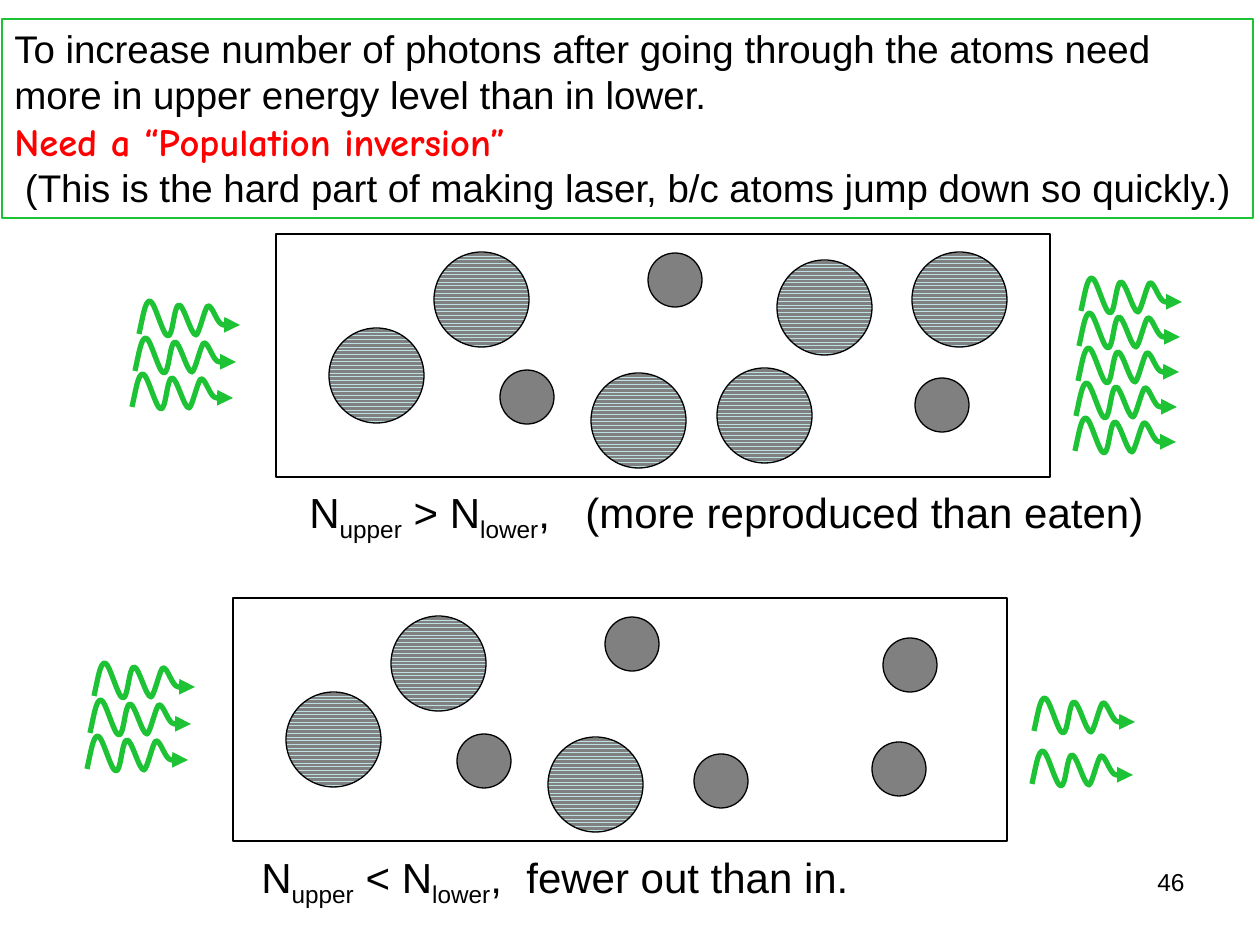
from lxml.etree import SubElement
from pptx import Presentation
from pptx.dml.color import RGBColor
from pptx.enum.dml import MSO_PATTERN
from pptx.enum.shapes import MSO_SHAPE
from pptx.enum.text import MSO_ANCHOR, PP_ALIGN
from pptx.oxml.ns import qn
from pptx.util import Pt

PX = 914400 // 126
COLORS = {"ink": "000000", "photon": "1EC235", "alert": "FF0000",
          "atom": "808080", "stripe": "BBE0E3"}
EXCITED_SIZE, GROUND_SIZE = 95, 54
WAVE_START = (0, 33)
WAVE_CONTROLS = [
    (4, 16), (6, 0), (11, 0), (16, 1), (24, 35), (29, 35), (34, 36),
    (35, 4), (40, 4), (45, 4), (52, 34), (57, 34), (60, 34), (66, 6),
    (69, 5), (73, 4), (77, 19), (82, 23), (87, 25), (98, 24), (101, 24),
]


def color(name):
    """Return the named colour."""
    return RGBColor.from_string(COLORS[name])


def outline(part, name, width=0.75):
    """Give a part a solid outline."""
    part.line.color.rgb = color(name)
    part.line.width = Pt(width)


def style(run, size, name="ink", family="Arial", bold=False):
    """Format one run of text."""
    run.font.size = Pt(size)
    run.font.name = family
    run.font.bold = bold
    run.font.color.rgb = color(name)


def add_text_area(slide, box):
    """Add a wrapping text box at a pixel box."""
    area = slide.shapes.add_textbox(*(side * PX for side in box))
    area.text_frame.word_wrap = True
    return area


def add_message(slide, box):
    """Add the framed explanation at the top."""
    message = add_text_area(slide, box)
    outline(message, "photon")
    frame = message.text_frame
    frame.word_wrap = False
    frame.text = "\n".join([
        "To increase number of photons after going through the atoms need",
        "more in upper energy level than in lower.",
        "Need a “Population inversion”",
        " (This is the hard part of making laser, b/c atoms jump down so quickly.)",
    ])
    for line in frame.paragraphs:
        style(line.runs[0], 22)
    style(frame.paragraphs[2].runs[0], 22, "alert", "Comic Neue", True)


def add_photon(slide, left, top):
    """Add one wavy photon arrow with smooth curves."""
    builder = slide.shapes.build_freeform(*WAVE_START, scale=PX)
    builder.add_line_segments(WAVE_CONTROLS, close=False)
    photon = builder.convert_to_shape(left * PX, top * PX)
    photon.shadow.inherit = False
    photon.fill.background()
    outline(photon, "photon", 3)
    SubElement(photon.line._get_or_add_ln(), qn("a:tailEnd"), type="triangle")
    path = next(photon._element.iter(qn("a:path")))
    segments = path.findall(qn("a:lnTo"))
    for first in range(0, len(segments), 3):
        curve = SubElement(path, qn("a:cubicBezTo"))
        for segment in segments[first:first + 3]:
            curve.append(segment[0])
            path.remove(segment)


def add_photons(slide, left, top, count, step_x, step_y):
    """Add an evenly stepped stack of photons."""
    for index in range(count):
        add_photon(slide, round(left + index * step_x), round(top + index * step_y))


def add_atom(slide, left, top, excited):
    """Add a large striped excited atom or a small ground-state atom."""
    size = EXCITED_SIZE if excited else GROUND_SIZE
    atom = slide.shapes.add_shape(
        MSO_SHAPE.OVAL, left * PX, top * PX, size * PX, size * PX)
    atom.shadow.inherit = False
    if excited:
        atom.fill.patterned()
        atom.fill.pattern = MSO_PATTERN.ZIG_ZAG
        atom.fill.fore_color.rgb = color("stripe")
        atom.fill.back_color.rgb = color("atom")
    else:
        atom.fill.solid()
        atom.fill.fore_color.rgb = color("atom")
    outline(atom, "ink")


def add_caption(slide, box, relation, remark, tab):
    """Add the population inequality and its tabbed remark."""
    caption = add_text_area(slide, box)
    line = caption.text_frame.paragraphs[0]
    tabs = SubElement(line._p.get_or_add_pPr(), qn("a:tabLst"))
    SubElement(tabs, qn("a:tab"), pos=str(tab * PX), algn="l")
    for text in ("N", "upper", f" {relation} N", "lower", f",\t{remark}"):
        run = line.add_run()
        run.text = text
        style(run, 24)
        if text in ("upper", "lower"):
            run._r.get_or_add_rPr().set("baseline", "-25000")


def add_panel(slide, box, excited, ground, streams, caption):
    """Add one gas cell with its atoms, photon streams and caption."""
    left, top, width, height = box
    cell = slide.shapes.add_shape(
        MSO_SHAPE.RECTANGLE, *(side * PX for side in box))
    cell.shadow.inherit = False
    cell.fill.background()
    outline(cell, "ink")
    for atoms, is_excited in ((ground, False), (excited, True)):
        for x, y in atoms:
            add_atom(slide, left + x, top + y, is_excited)
    for x, y, *steps in streams:
        add_photons(slide, left + x, top + y, *steps)
    (x, y, *size), *wording = caption
    add_caption(slide, (left + x, top + y, *size), *wording)


def add_page_number(slide, box):
    """Add the page number."""
    number = add_text_area(slide, box)
    number.text_frame.vertical_anchor = MSO_ANCHOR.TOP
    line = number.text_frame.paragraphs[0]
    line.text = "46"
    line.alignment = PP_ALIGN.RIGHT
    style(line.runs[0], 14)


def main():
    """Build and save the slide."""
    deck = Presentation()
    deck.slide_width, deck.slide_height = 1260 * PX, 945 * PX
    slide = deck.slides.add_slide(deck.slide_layouts[6])
    shared_excited = [(158, 18), (315, 139), (53, 94)]
    shared_ground = [(224, 136), (372, 19), (639, 144)]
    add_page_number(slide, (903, 861, 294, 66))
    add_message(slide, (2, 19, 1251, 199))
    add_panel(
        slide, (276, 234, 774, 243),
        shared_excited + [(501, 26), (636, 18), (441, 134)],
        shared_ground,
        [(-137, 67, 3, -3.7, 36.7), (805, 44, 5, -1.6, 35)],
        ((21, 246, 888, 63), ">", "(more reproduced than eaten)", 276))
    add_panel(
        slide, (233, 598, 774, 243),
        shared_excited,
        shared_ground + [(461, 156), (650, 40)],
        [(-139, 65, 3, -3.7, 36.7), (801, 100, 2, -2, 53)],
        ((16, 247, 641, 63), "<", "fewer out than in.", 265))
    deck.save("out.pptx")


if __name__ == "__main__":
    main()
